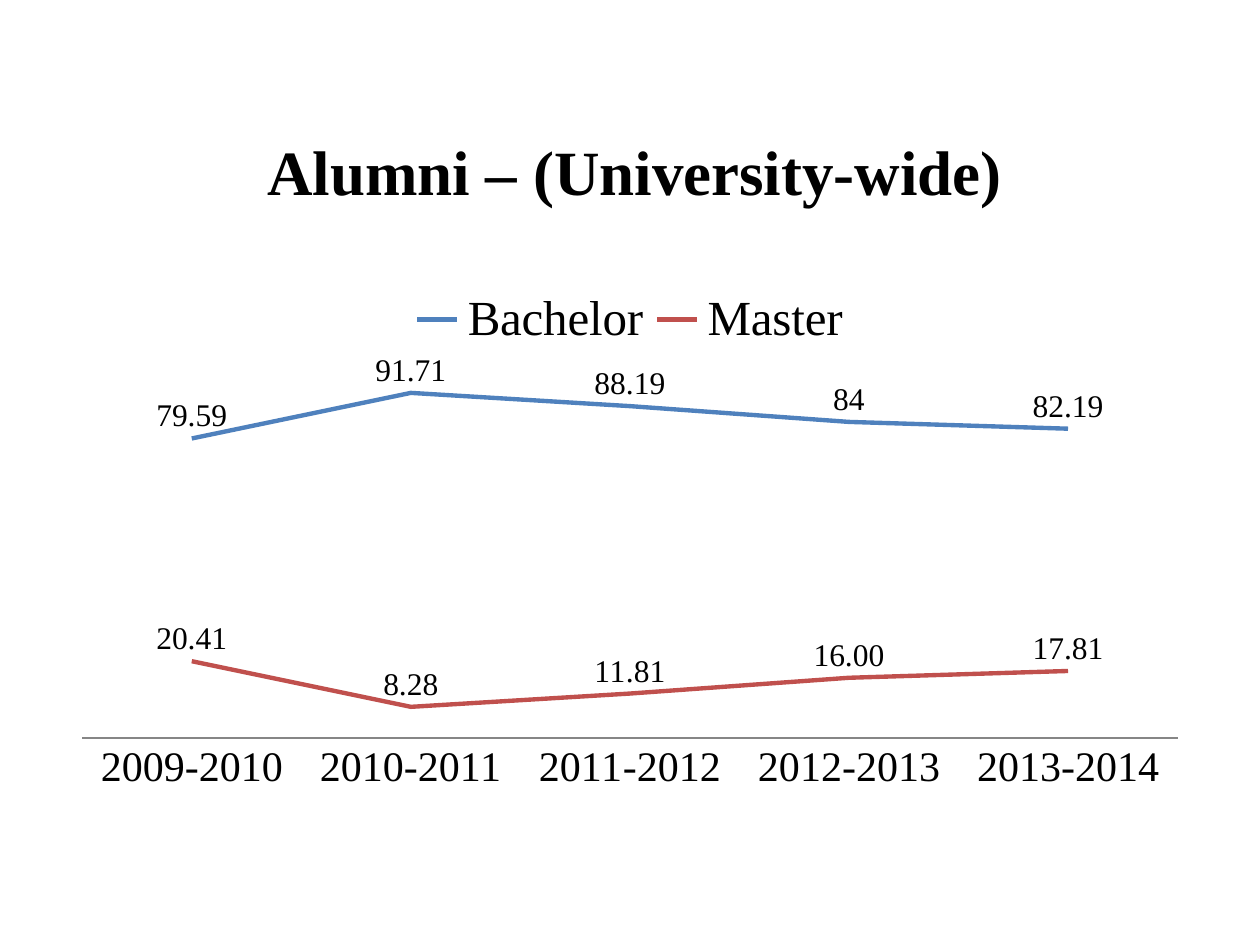
from dataclasses import dataclass

from lxml import etree
from pptx import Presentation
from pptx import util as u
from pptx.chart.data import CategoryChartData
from pptx.dml.color import RGBColor
from pptx.enum import chart as c
from pptx.oxml.ns import qn


@dataclass(frozen=True)
class Theme:
    """Colours, font and type sizes of the slide."""
    font: str = "Times New Roman"
    ink: str = "000000"
    axis: str = "868686"
    series: tuple = ("4F81BD", "C0504D")
    title_size: int = 36
    legend_size: int = 28
    axis_size: int = 24
    label_size: int = 18
    line_width: float = 2.5
    axis_width: float = 0.75


THEME = Theme()
YEARS = [f"{year}-{year + 1}" for year in range(2009, 2014)]
DEGREES = {
    "Bachelor": ([79.59, 91.71, 88.19, 84, 82.19], "General"),
    "Master": ([20.41, 8.28, 11.81, 16, 17.81], "0.00"),
}


def style_font(font, size, bold=False):
    """Give a font the theme's face and ink at the given size."""
    font.name = THEME.font
    font.size = u.Pt(size)
    font.bold = bold
    font.color.rgb = RGBColor.from_string(THEME.ink)


def style_line(line, color, width):
    """Set the colour and width of a line."""
    line.color.rgb = RGBColor.from_string(color)
    line.width = u.Pt(width)


def place(element, inner=False, **shares):
    """Place a chart part by shares of the chart's size."""
    for old in element.findall(qn("c:layout")):
        element.remove(old)
    layout = etree.Element(qn("c:layout"))
    manual = etree.SubElement(layout, qn("c:manualLayout"))
    settings = {"layoutTarget": "inner"} if inner else {}
    settings.update({"xMode": "edge", "yMode": "edge"})
    settings.update(shares)
    for name, value in settings.items():
        etree.SubElement(manual, qn(f"c:{name}")).set("val", str(value))
    overlay = element.find(qn("c:overlay"))
    position = 0 if overlay is None else element.index(overlay)
    element.insert(position, layout)


def add_line_chart(slide, left, top, width, height):
    """Add the line chart of alumni by degree and return it."""
    data = CategoryChartData()
    data.categories = YEARS
    for name, (values, number_format) in DEGREES.items():
        data.add_series(name, values, number_format)
    frame = slide.shapes.add_chart(
        c.XL_CHART_TYPE.LINE, left, top, width, height, data)
    chart = frame.chart
    style_font(chart.font, THEME.label_size)
    chart.plots[0].vary_by_categories = False
    place(chart.plots[0]._element.getparent(), inner=True,
          x=0.017, y=0.343, w=0.966, h=0.472)
    return chart


def set_title(chart, title):
    """Write the chart's title above the legend."""
    chart.has_title = True
    frame = chart.chart_title.text_frame
    frame.text = title
    style_font(frame.paragraphs[0].runs[0].font, THEME.title_size, bold=True)
    place(chart.chart_title._element, x=0.17, y=0.04)


def set_legend(chart):
    """Show the legend between title and plot."""
    chart.has_legend = True
    legend = chart.legend
    legend.position = c.XL_LEGEND_POSITION.TOP
    legend.include_in_layout = False
    style_font(legend.font, THEME.legend_size)
    place(legend._element, x=0.3, y=0.25, w=0.4, h=0.08)


def style_axes(chart):
    """Keep the category axis plain and hide the value axis."""
    category = chart.category_axis
    category.major_tick_mark = c.XL_TICK_MARK.NONE
    style_font(category.tick_labels.font, THEME.axis_size)
    style_line(category.format.line, THEME.axis, THEME.axis_width)
    value = chart.value_axis
    value.minimum_scale, value.maximum_scale = 0, 100
    value.has_major_gridlines = False
    value.visible = False


def style_series(series, color, number_format):
    """Colour one series and label its points above the line."""
    series.smooth = False
    series.marker.style = c.XL_MARKER_STYLE.NONE
    style_line(series.format.line, color, THEME.line_width)
    labels = series.data_labels
    labels.show_value = True
    labels.position = c.XL_LABEL_POSITION.ABOVE
    labels.number_format = number_format
    labels.number_format_is_linked = False
    style_font(labels.font, THEME.label_size)


def main():
    """Build the slide and save it."""
    presentation = Presentation()
    presentation.slide_width = u.Inches(10)
    presentation.slide_height = u.Inches(7.5)
    slide = presentation.slides.add_slide(presentation.slide_layouts[6])
    chart = add_line_chart(
        slide, u.Inches(0.5), u.Inches(0.7), u.Inches(9), u.Inches(6.33))
    set_title(chart, "Alumni – (University-wide)")
    set_legend(chart)
    style_axes(chart)
    formats = [number_format for _, number_format in DEGREES.values()]
    for series, color, number_format in zip(
            chart.plots[0].series, THEME.series, formats):
        style_series(series, color, number_format)
    presentation.save("out.pptx")


if __name__ == "__main__":
    main()
